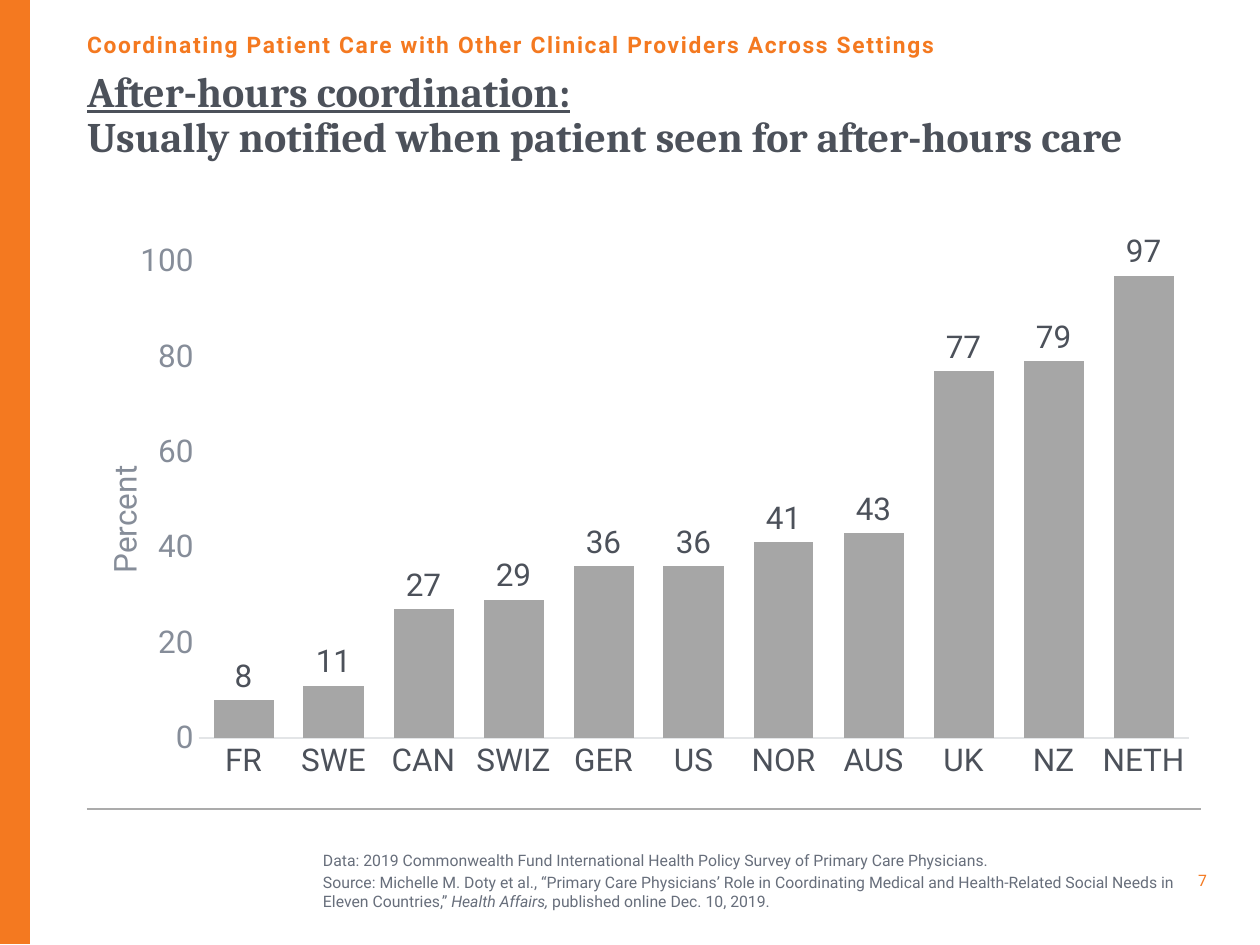
from lxml import etree
from pptx import Presentation
from pptx.chart.data import CategoryChartData
from pptx.dml.color import RGBColor
from pptx.enum.chart import XL_CHART_TYPE as ChartType
from pptx.enum.chart import XL_LABEL_POSITION as LabelPosition
from pptx.enum.chart import XL_TICK_MARK as TickMark
from pptx.enum.shapes import MSO_CONNECTOR as Connector
from pptx.enum.shapes import MSO_SHAPE as Shape
from pptx.enum.text import MSO_ANCHOR as Anchor
from pptx.enum.text import PP_ALIGN as Align
from pptx.oxml import parse_xml
from pptx.oxml.ns import nsdecls, qn
from pptx.util import Emu, Pt

PX = 914400 / 126
COLORS = {
    "accent": "F47920", "text": "4C515A", "axis": "868D99", "note": "676E7B",
    "bar": "A6A6A6", "rule": "ABABAB", "baseline": "E3E5E7",
}
SANS, SERIF = "Roboto", "Cambria"
RATES = {
    "FR": 8, "SWE": 11, "CAN": 27, "SWIZ": 29, "GER": 36, "US": 36,
    "NOR": 41, "AUS": 43, "UK": 77, "NZ": 79, "NETH": 97,
}


def px(value):
    return Emu(round(value * PX))


def color(name):
    return RGBColor.from_string(COLORS[name])


def style(font, size, name, face=SANS, bold=False):
    font.size, font.name, font.bold = Pt(size), face, bold
    font.color.rgb = color(name)


def add_text(page, box, lines, anchor=Anchor.TOP, wrap=True):
    """Add a text box without margins and return its paragraphs."""
    frame = page.shapes.add_textbox(*map(px, box)).text_frame
    frame.margin_left = frame.margin_right = 0
    frame.margin_top = frame.margin_bottom = 0
    frame.word_wrap, frame.vertical_anchor = wrap, anchor
    frame.text = "\n".join(lines)
    return frame.paragraphs


def add_frame(page, box):
    """Side bar, footer rule and page number."""
    left, top, width, height = box
    bar = page.shapes.add_shape(Shape.RECTANGLE, *map(px, (left, top, 30, height)))
    bar.shadow.inherit = False
    bar.fill.solid()
    bar.fill.fore_color.rgb = color("accent")
    bar.line.fill.background()

    rule_y = top + 810
    rule = page.shapes.add_connector(
        Connector.STRAIGHT, px(left + 87), px(rule_y), px(left + 1201), px(rule_y))
    rule.line.color.rgb = color("rule")
    rule.line.width = Pt(0.75)
    etree.SubElement(rule._element.spPr, qn("a:effectLst"))

    number = add_text(page, (left + width - 92, top + 867, 39, 28), ["7"],
                      Anchor.MIDDLE, wrap=False)[0]
    number.alignment = Align.RIGHT
    style(number.runs[0].font, 9, "accent")


def add_heading(page, box):
    """Section line above a two-line title."""
    left, top, width, height = box
    section = add_text(
        page, (left, top, width, 34),
        ["Coordinating Patient Care with Other Clinical Providers Across Settings"],
        Anchor.BOTTOM)[0].runs[0]
    style(section.font, 13, "accent", bold=True)
    section.font._element.set("spc", "100")

    title = add_text(
        page, (left, top + 47, width, height - 47),
        ["After-hours coordination:\v"
         "Usually notified when patient seen for after-hours care"])[0]
    title.line_spacing = 0.9
    for span in title.runs:
        style(span.font, 24, "text", SERIF, bold=True)
    title.runs[0].font.underline = True


def set_layout(parent, index, target, **fractions):
    """Give a chart part a fixed place, in fractions of the chart."""
    for old in parent.findall(qn("c:layout")):
        parent.remove(old)
    inner = f'<c:layoutTarget val="{target}"/>' if target else ""
    modes = "".join(f'<c:{axis}Mode val="edge"/>' for axis in "xy")
    values = "".join(f'<c:{key} val="{value}"/>' for key, value in fractions.items())
    parent.insert(index, parse_xml(
        f'<c:layout {nsdecls("c")}><c:manualLayout>{inner}{modes}{values}'
        "</c:manualLayout></c:layout>"))


def add_rate_chart(page, box):
    """Column chart of the rate in each country."""
    data = CategoryChartData(number_format="0")
    data.categories = list(RATES)
    data.add_series("Series 1", list(RATES.values()))
    chart = page.shapes.add_chart(
        ChartType.COLUMN_CLUSTERED, *map(px, box), data).chart
    chart.has_legend = chart.has_title = False
    style(chart.font, 18, "text")
    plot_area = chart._chartSpace.chart.plotArea
    set_layout(plot_area, 0, "inner", x=0.1, y=0.045, w=0.888, h=0.85)

    # Bars and their labels
    plot = chart.plots[0]
    plot.gap_width, plot.overlap, plot.vary_by_categories = 50, -27, False
    fill = plot.series[0].format.fill
    fill.solid()
    fill.fore_color.rgb = color("bar")
    plot.has_data_labels = True
    labels = plot.data_labels
    labels.show_value, labels.position = True, LabelPosition.OUTSIDE_END
    labels.number_format, labels.number_format_is_linked = "0", False
    style(labels.font, 18, "text")

    # Axes
    countries, percent = chart.category_axis, chart.value_axis
    for axis, name in ((countries, "text"), (percent, "axis")):
        axis.has_major_gridlines = False
        axis.major_tick_mark = axis.minor_tick_mark = TickMark.NONE
        style(axis.tick_labels.font, 18, name)
    countries.format.line.color.rgb = color("baseline")
    countries.format.line.width = Pt(0.75)
    percent.format.line.fill.background()
    percent.minimum_scale, percent.maximum_scale, percent.major_unit = 0, 100, 20
    percent.tick_labels.number_format = "#,##0"
    percent.tick_labels.number_format_is_linked = False

    # Axis title
    title = percent.axis_title
    title.text_frame.text = "Percent"
    style(title.text_frame.paragraphs[0].runs[0].font, 18, "axis")
    turn = title.text_frame._txBody.find(qn("a:bodyPr"))
    turn.set("rot", "-5400000")
    turn.set("vert", "horz")
    set_layout(title._element, 1, None, x=0.01, y=0.4)


def add_sources(page, box):
    """Data and source notes."""
    paras = add_text(page, box, [
        "Data: 2019 Commonwealth Fund International Health Policy Survey of "
        "Primary Care Physicians.",
        "Source: Michelle M. Doty et al., “Primary Care Physicians’ Role in "
        "Coordinating Medical and Health-Related Social Needs in Eleven Countries,” ",
    ], Anchor.MIDDLE)
    source = paras[1]
    source.space_before = Pt(2)
    journal = source.add_run()
    journal.text = "Health Affairs,"
    source.add_run().text = " published online Dec. 10, 2019."
    for para in paras:
        for span in para.runs:
            style(span.font, 9, "note")
    journal.font.italic = True


def main():
    deck = Presentation()
    deck.slide_width, deck.slide_height = px(1260), px(945)
    page = deck.slides.add_slide(deck.slide_layouts[6])
    add_frame(page, (0, -1, 1260, 945))
    add_rate_chart(page, (87, 234, 1115, 563))
    add_sources(page, (323, 827, 861, 107))
    add_heading(page, (87, 24, 1115, 210))
    deck.save("out.pptx")


if __name__ == "__main__":
    main()
